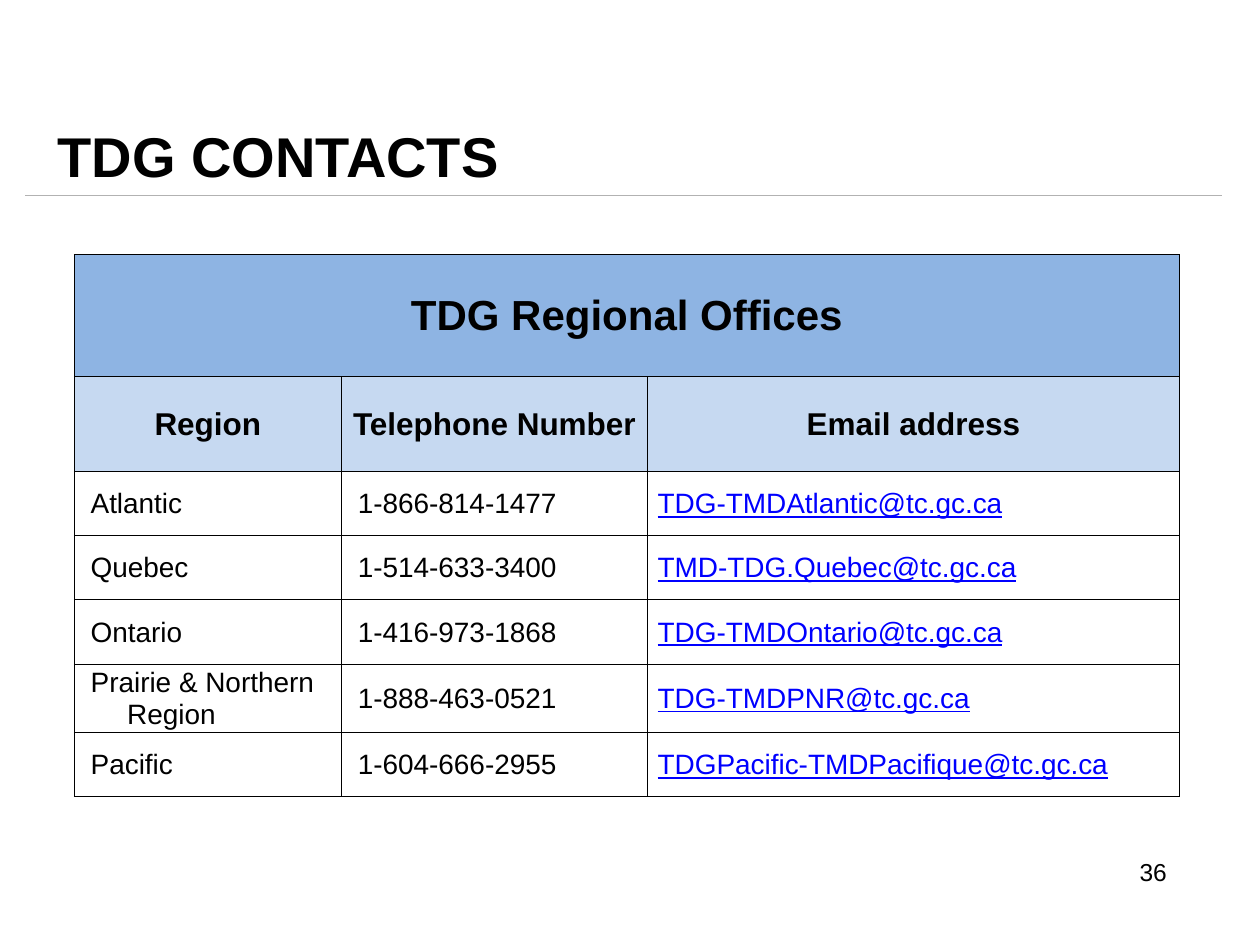
from lxml import etree
from pptx import Presentation
from pptx.dml.color import RGBColor
from pptx.enum import shapes, text
from pptx.oxml import ns
from pptx.util import Inches, Pt

LEFT, CENTER, RIGHT = text.PP_ALIGN.LEFT, text.PP_ALIGN.CENTER, text.PP_ALIGN.RIGHT
COLUMNS = [2.12, 2.43, 4.22]
ROWS = [0.97, 0.75] + [0.51] * 5
HEADINGS = ["Region", "Telephone Number", "Email address"]
OFFICES = [
    ("Atlantic", "1-866-814-1477", "TDG-TMDAtlantic@tc.gc.ca"),
    ("Quebec", "1-514-633-3400", "TMD-TDG.Quebec@tc.gc.ca"),
    ("Ontario", "1-416-973-1868", "TDG-TMDOntario@tc.gc.ca"),
    ("Prairie & Northern Region", "1-888-463-0521", "TDG-TMDPNR@tc.gc.ca"),
    ("Pacific", "1-604-666-2955", "TDGPacific-TMDPacifique@tc.gc.ca"),
]


def rgb(color):
    """Turn a hex string into a colour."""
    return RGBColor.from_string(color)


def write(p, words, size, bold=False, align=LEFT, color="000000", underline=False):
    """Fill a paragraph with words in one style."""
    p.add_run().text = words
    p.alignment = align
    font = p.font
    font.name, font.size, font.bold = "Arial", Pt(size), bold
    font.underline = underline
    font.color.rgb = rgb(color)


def add_text(s, box, words, size, **style):
    """Add a wrapping, vertically centred text box."""
    tf = s.shapes.add_textbox(*map(Inches, box)).text_frame
    tf.word_wrap = True
    tf.vertical_anchor = text.MSO_ANCHOR.MIDDLE
    write(tf.paragraphs[0], words, size, **style)


def add_rule(s, left, right, y):
    """Add the thin grey rule under the title."""
    line = s.shapes.add_connector(shapes.MSO_CONNECTOR.STRAIGHT,
                                  Inches(left), Inches(y), Inches(right), Inches(y))
    line.line.color.rgb = rgb("B2B2B2")
    line.line.width = Pt(0.75)
    etree.SubElement(line._element.spPr, ns.qn("a:effectLst"))


def style_cell(cell, fill=None, left=0.01):
    """Set the borders, margins, anchor and fill of a cell."""
    tc_pr = cell._tc.get_or_add_tcPr()
    for side in ("lnL", "lnR", "lnT", "lnB"):
        ln = etree.SubElement(tc_pr, ns.qn(f"a:{side}"), w=str(Pt(0.5)))
        solid = etree.SubElement(ln, ns.qn("a:solidFill"))
        etree.SubElement(solid, ns.qn("a:srgbClr"), val="000000")
    cell.margin_left = Inches(left)
    cell.margin_right = cell.margin_top = Inches(0.01)
    cell.margin_bottom = 0
    cell.vertical_anchor = text.MSO_ANCHOR.MIDDLE
    if fill:
        cell.fill.solid()
        cell.fill.fore_color.rgb = rgb(fill)
    else:
        cell.fill.background()


def hang(p, margin, indent):
    """Give a paragraph a hanging indent."""
    p_pr = p._p.get_or_add_pPr()
    p_pr.set("marL", str(Inches(margin)))
    p_pr.set("indent", str(Inches(indent)))


def add_offices(s, left, top):
    """Add the table of regional offices."""
    table = s.shapes.add_table(len(ROWS), len(COLUMNS), Inches(left), Inches(top),
                               Inches(sum(COLUMNS)), Inches(sum(ROWS))).table
    table.first_row = table.horz_banding = False
    for column, width in zip(table.columns, COLUMNS):
        column.width = Inches(width)
    for row, height in zip(table.rows, ROWS):
        row.height = Inches(height)

    for c, heading in enumerate(HEADINGS):
        style_cell(table.cell(0, c), "8EB4E3")
        style_cell(table.cell(1, c), "C6D9F1")
        write(table.cell(1, c).text_frame.paragraphs[0], heading, 18, bold=True, align=CENTER)
    title = table.cell(0, 0)
    title.merge(table.cell(0, 2))
    write(title.text_frame.paragraphs[0], "TDG Regional Offices", 24, bold=True, align=CENTER)

    for r, office in enumerate(OFFICES, start=2):
        for c, words in enumerate(office):
            cell = table.cell(r, c)
            p = cell.text_frame.paragraphs[0]
            if c == 2:
                style_cell(cell, left=0.08)
                write(p, words, 16, color="0000FF", underline=True)
            else:
                style_cell(cell)
                hang(p, 0.41, -0.29)
                write(p, words, 16)


def main():
    """Build the contacts slide."""
    prs = Presentation()
    prs.slide_width, prs.slide_height = Inches(10), Inches(7.5)
    s = prs.slides.add_slide(prs.slide_layouts[6])
    add_text(s, (0.36, 0.92, 9, 0.63), "TDG CONTACTS", 32, bold=True)
    add_rule(s, 0.2, 9.7, 1.55)
    add_text(s, (7.26, 6.74, 2.1, 0.36), "36", 14, align=RIGHT)
    add_offices(s, 0.59, 2.02)
    prs.save("out.pptx")


if __name__ == "__main__":
    main()
